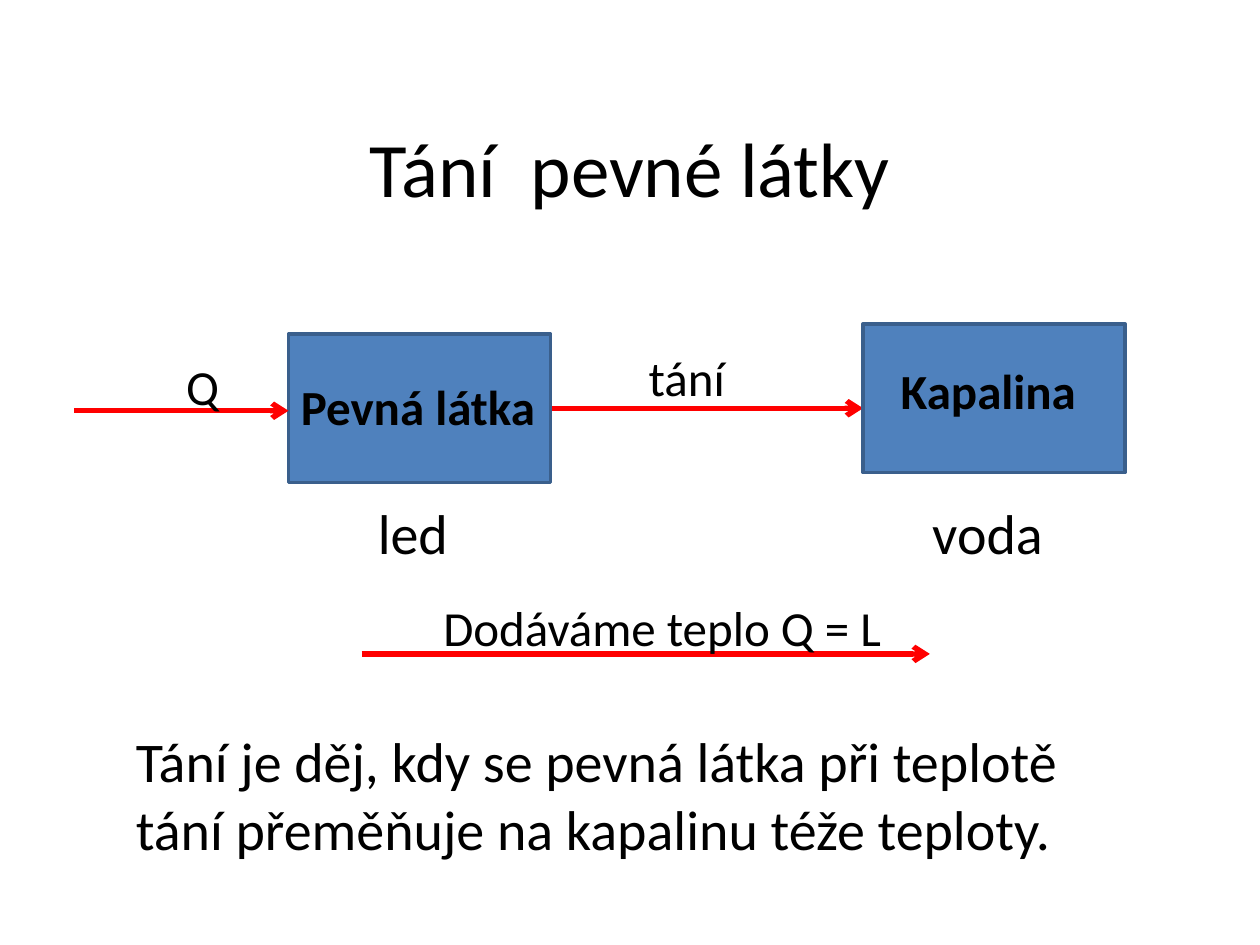
from dataclasses import dataclass

from lxml import etree
from pptx import Presentation
from pptx.dml.color import RGBColor
from pptx.enum.shapes import MSO_CONNECTOR, MSO_SHAPE
from pptx.enum.text import MSO_ANCHOR, PP_ALIGN
from pptx.oxml.ns import qn
from pptx.util import Inches, Pt

STRAIGHT = MSO_CONNECTOR.STRAIGHT
RECTANGLE = MSO_SHAPE.RECTANGLE
MIDDLE, TOP = MSO_ANCHOR.MIDDLE, MSO_ANCHOR.TOP
LEFT, CENTER = PP_ALIGN.LEFT, PP_ALIGN.CENTER

COLUMNS, ROWS = 100, 75
WIDTH, HEIGHT = Inches(10), Inches(7.5)


@dataclass(frozen=True)
class Theme:
    font: str = "Calibri"
    ink: RGBColor = RGBColor(0x00, 0x00, 0x00)
    block: RGBColor = RGBColor(0x4F, 0x81, 0xBD)
    edge: RGBColor = RGBColor(0x3A, 0x5F, 0x8C)
    heat: RGBColor = RGBColor(0xFF, 0x00, 0x00)
    title: int = 44
    body: int = 32
    label: int = 28
    edge_width: int = 2
    arrow_width: int = 3


THEME = Theme()


def grid(*cells):
    steps = (WIDTH / COLUMNS, HEIGHT / ROWS)
    return [round(cell * steps[i % 2]) for i, cell in enumerate(cells)]


def write(holder, text, size=THEME.label, bold=False, align=LEFT, anchor=TOP, wrap=False):
    frame = holder.text_frame
    frame.word_wrap = wrap
    frame.vertical_anchor = anchor
    frame.text = text
    paragraph = frame.paragraphs[0]
    paragraph.alignment = align
    font = paragraph.runs[0].font
    font.name, font.size, font.bold = THEME.font, Pt(size), bold
    font.color.rgb = THEME.ink


def add_text(slide, box, text, **style):
    write(slide.shapes.add_textbox(*grid(*box)), text, **style)


def add_arrow(slide, left, row, length):
    arrow = slide.shapes.add_connector(STRAIGHT, *grid(left, row, left + length, row))
    arrow.line.color.rgb = THEME.heat
    arrow.line.width = Pt(THEME.arrow_width)
    etree.SubElement(arrow.line._get_or_add_ln(), qn("a:tailEnd"), type="arrow")
    etree.SubElement(arrow._element.spPr, qn("a:effectLst"))


def add_title(slide, box, text):
    title = slide.shapes.title
    title.left, title.top, title.width, title.height = grid(*box)
    write(title, text, size=THEME.title, align=CENTER, anchor=MIDDLE, wrap=True)


def add_state(slide, box, name, name_box, example, example_box):
    block = slide.shapes.add_shape(RECTANGLE, *grid(*box))
    block.shadow.inherit = False
    block.fill.solid()
    block.fill.fore_color.rgb = THEME.block
    block.line.color.rgb = THEME.edge
    block.line.width = Pt(THEME.edge_width)
    left, top = box[:2]
    for text, (dx, dy, width, height), style in (
        (name, name_box, {"bold": True}),
        (example, example_box, {"size": THEME.body}),
    ):
        add_text(slide, (left + dx, top + dy, width, height), text, **style)


def add_flow(slide, box, text, text_offset, text_width):
    left, row, length = box
    dx, dy = text_offset
    add_arrow(slide, left, row, length)
    add_text(slide, (left + dx, row + dy, text_width, 5.7), text)


def main():
    deck = Presentation()
    deck.slide_width, deck.slide_height = WIDTH, HEIGHT
    slide = deck.slides.add_slide(deck.slide_layouts.get_by_name("Title Only"))

    solid_left, liquid_left, block_width, block_height = 22.9, 68.5, 20.8, 11.8
    solid_right = solid_left + block_width

    add_title(slide, (7.5, 5.2, 85, 16.1), "Tání  pevné látky")
    add_flow(slide, (solid_right, 32.4, liquid_left - solid_right), "tání", (6.8, -5.3), 8.1)
    add_state(slide, (solid_left, 26.5, block_width, block_height),
              "Pevná látka", (0, 2.9, block_width, 5.7), "led", (6.1, 12.6, 7.6, 6.4))
    add_state(slide, (liquid_left, 25.7, block_width, block_height),
              "Kapalina", (2, 2.4, 16.1, 5.7), "voda", (4.5, 13.4, 10.9, 6.4))
    add_flow(slide, (5.9, 32.6, solid_left - 5.9), "Q", (7.9, -4.8), 4.7)
    add_flow(slide, (28.7, 51.9, 45.1), "Dodáváme teplo Q = L", (5.5, -5), 37.1)
    add_text(slide, (9.8, 57.2, 82.7, 11.8),
             "Tání je děj, kdy se pevná látka při teplotě tání přeměňuje na kapalinu téže teploty.",
             size=THEME.body, wrap=True)

    deck.save("out.pptx")


if __name__ == "__main__":
    main()
